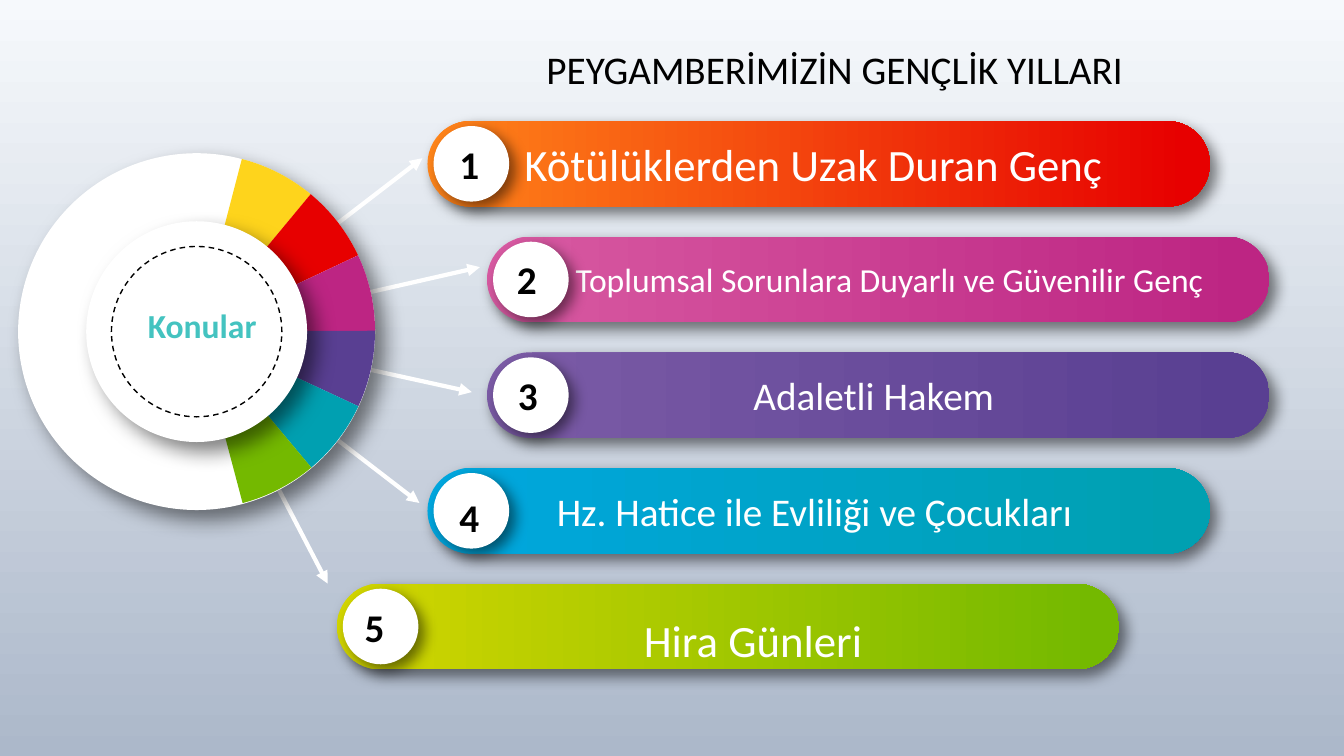
from lxml.etree import SubElement
from pptx import Presentation
from pptx.dml.color import RGBColor
from pptx.enum.dml import MSO_LINE
from pptx.enum.shapes import MSO_CONNECTOR, MSO_SHAPE
from pptx.enum.text import MSO_ANCHOR, MSO_AUTO_SIZE, PP_ALIGN
from pptx.oxml.ns import qn
from pptx.util import Inches, Pt

WHITE = RGBColor(0xFF, 0xFF, 0xFF)
BLACK = RGBColor(0, 0, 0)
AQUA = RGBColor(0x44, 0xC3, 0xC0)
PALE = RGBColor(0xF6, 0xF9, 0xFC)
SLATE = RGBColor(0xAC, 0xB8, 0xCA)
YELLOW = RGBColor(0xFE, 0xD4, 0x1C)
ORANGE = RGBColor(0xFF, 0x85, 0x1A)
RED = RGBColor(0xE7, 0, 0)
PINK = RGBColor(0xD8, 0x5A, 0xA2)
PLUM = RGBColor(0xBD, 0x25, 0x83)
LILAC = RGBColor(0x7B, 0x5B, 0xA6)
VIOLET = RGBColor(0x59, 0x3F, 0x92)
BLUE = RGBColor(0, 0xA7, 0xDF)
TEAL = RGBColor(0, 0xA0, 0xB1)
LIME = RGBColor(0xD3, 0xD6, 0)
GREEN = RGBColor(0x74, 0xB9, 0)

# Content
TITLE = "PEYGAMBERİMİZİN GENÇLİK YILLARI"
HUB = "Konular"
# text, size, indent, line spacing, bar left, colours, arrow tip, digit offset
TOPICS = [
    ("Kötülüklerden Uzak Duran Genç ", 32, 0, 1, 4.24, (ORANGE, RED), (4.19, 1.57), (0.23, 0.14)),
    ("Toplumsal Sorunlara Duyarlı ve Güvenilir Genç ", 24, 0.3, 1, 4.83, (PINK, PLUM), (4.76, 2.65), (0.21, 0.14)),
    ("Adaletli Hakem ", 28, 0, 1, 4.83, (LILAC, VIOLET), (4.68, 3.89), (0.22, 0.14)),
    ("Hz. Hatice ile Evliliği ve Çocukları ", 28, 0, 1, 4.24, (BLUE, TEAL), (4.16, 4.99), (0.23, 0.2)),
    ("Hira Günleri", 32, 0.5, 1.5, 3.34, (LIME, GREEN), (3.25, 5.79), (0.19, 0.15)),
]
WEDGES = [YELLOW, RED, PLUM, VIOLET, TEAL, GREEN]

# Layout
MID = (1.95, 3.29)
FIRST, LAST = 1.2, 5.79
STEP = (LAST - FIRST) / (len(TOPICS) - 1)
BAR_W, BAR_H, DISC = 7.76, 0.85, 0.75
TURN, SWEEP = 275.7, 25.1

deck = Presentation()
deck.slide_width, deck.slide_height = Inches(13.33), Inches(7.5)
slide = deck.slides.add_slide(deck.slide_layouts[5])
shapes = slide.shapes


def blend(fill, pair, angle, end=1):
    fill.gradient()
    fill.gradient_angle = angle
    for stop, color, pos in zip(fill.gradient_stops, pair, (0, end)):
        stop.color.rgb = color
        stop.position = pos


def write(shape, text, size=28, color=BLACK, bold=False, align=PP_ALIGN.CENTER,
          anchor=MSO_ANCHOR.TOP, wrap=True, indent=0, space=1):
    frame = shape.text_frame
    frame.auto_size = MSO_AUTO_SIZE.NONE
    frame.word_wrap = wrap
    frame.vertical_anchor = anchor
    para = frame.paragraphs[0]
    para.text = text
    para.alignment = align
    para.line_spacing = space
    if indent:
        props = para._p.get_or_add_pPr()
        props.set("marL", str(Inches(indent)))
        props.set("indent", "0")
    font = para.runs[0].font
    font.name, font.size, font.bold = "Calibri", Pt(size), bold
    font.color.rgb = color


def box(left, top, width, height):
    return shapes.add_textbox(Inches(left), Inches(top), Inches(width), Inches(height))


def draw(kind, left, top, width, height, color=None, blur=0, dist=0):
    shape = shapes.add_shape(kind, Inches(left), Inches(top), Inches(width), Inches(height))
    shape.line.fill.background()
    if color is None:
        shape.fill.background()
    else:
        shape.fill.solid()
        shape.fill.fore_color.rgb = color
    shape.shadow.inherit = False
    if blur:
        glow = SubElement(shape._element.spPr.find(qn("a:effectLst")), qn("a:outerShdw"),
                          blurRad=str(Pt(blur)), dist=str(Pt(dist)),
                          dir=str(45 * 60000), algn="tl", rotWithShape="0")
        tint = SubElement(glow, qn("a:srgbClr"), val=str(BLACK))
        SubElement(tint, qn("a:alpha"), val="50000")
    return shape


def ring(size, color=None, **look):
    return draw(MSO_SHAPE.OVAL, MID[0] - size / 2, MID[1] - size / 2, size, size, color, **look)


# Background and title
blend(slide.background.fill, (PALE, SLATE), 270)
title = shapes.title
title.left, title.top = Inches(5.32), Inches(0.4)
title.width, title.height = Inches(5.98), Inches(0.57)
write(title, TITLE, align=PP_ALIGN.LEFT)

# Arrows
for topic in TOPICS:
    ends = [Inches(v) for v in MID + topic[6]]
    arrow = shapes.add_connector(MSO_CONNECTOR.STRAIGHT, *ends)
    arrow.line.color.rgb = WHITE
    arrow.line.width = Pt(3)
    SubElement(arrow.line._get_or_add_ln(), qn("a:tailEnd"), type="triangle")
    SubElement(arrow._element.spPr, qn("a:effectLst"))

# Wheel
ring(3.54, WHITE, blur=15, dist=10)
for i, color in enumerate(WEDGES):
    wedge = draw(MSO_SHAPE.PIE, 0.19, 1.52, 3.53, 3.53, color)
    wedge.adjustments[0], wedge.adjustments[1] = 5.33, 20.39
    wedge.rotation = (TURN + i * SWEEP) % 360
ring(2.19, WHITE, blur=15, dist=10)
dashes = ring(1.69)
dashes.line.color.rgb = BLACK
dashes.line.width = Pt(1)
dashes.line.dash_style = MSO_LINE.DASH
write(box(1, 2.98, 2.01, 0.5), HUB, size=24, color=AQUA, bold=True)

# Topic bars with numbered discs
for i, (text, size, indent, space, left, pair, tip, (dx, dy)) in enumerate(TOPICS):
    top = FIRST + i * STEP
    bar = draw(MSO_SHAPE.ROUNDED_RECTANGLE, left, top, BAR_W, BAR_H, WHITE, blur=10, dist=6)
    bar.adjustments[0] = 0.5
    blend(bar.fill, pair, 0, end=0.97)
    write(bar, text, size=size, color=WHITE, anchor=MSO_ANCHOR.MIDDLE, indent=indent, space=space)
    draw(MSO_SHAPE.OVAL, left + 0.06, top + 0.05, DISC, DISC, WHITE, blur=10, dist=6)
    write(box(left + dx, top + dy, 0.37, 0.57), str(i + 1), bold=True, wrap=False)

deck.save("out.pptx")
